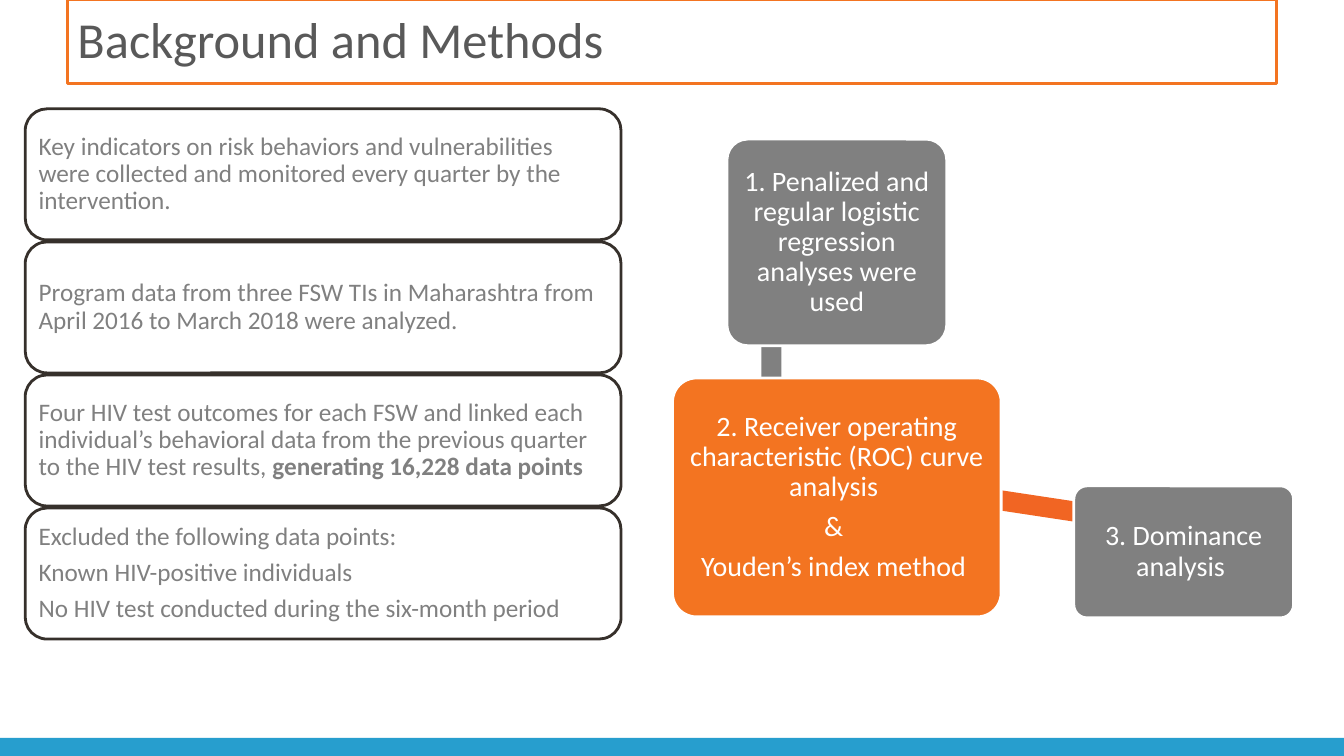
from dataclasses import dataclass

from pptx import Presentation
from pptx.dml.color import RGBColor
from pptx.enum.shapes import MSO_SHAPE
from pptx.enum.text import MSO_ANCHOR, PP_ALIGN
from pptx.util import Inches, Pt

RECT = MSO_SHAPE.RECTANGLE
ROUNDED = MSO_SHAPE.ROUNDED_RECTANGLE
MIDDLE = MSO_ANCHOR.MIDDLE
LEFT = PP_ALIGN.LEFT
CENTER = PP_ALIGN.CENTER


@dataclass(frozen=True)
class Theme:
    """Colours, font and type sizes of the slide."""
    font: str = "Calibri"
    white: str = "FFFFFF"
    gray: str = "808080"
    dark: str = "36302B"
    heading: str = "595959"
    orange: str = "F37421"
    link_orange: str = "F16523"
    blue: str = "279ECE"
    title_size: int = 36
    fact_size: int = 18
    step_size: int = 20


class SlideBuilder:
    """Draws styled elements on one slide."""

    def __init__(self, slide, theme):
        self.slide = slide
        self.theme = theme

    def block(self, kind, box, fill, line=None, rotation=0):
        """Add a filled shape with an optional outline."""
        shape = self.slide.shapes.add_shape(kind, *map(Inches, box))
        shape.shadow.inherit = False
        shape.rotation = rotation
        shape.fill.solid()
        shape.fill.fore_color.rgb = RGBColor.from_string(fill)
        if line:
            shape.line.color.rgb = RGBColor.from_string(line)
            shape.line.width = Pt(2)
        else:
            shape.line.fill.background()
        return shape

    def label(self, shape, paragraphs, size, color, align, inset):
        """Fill a shape with paragraphs, each a list of runs."""
        frame = shape.text_frame
        frame.word_wrap = True
        frame.vertical_anchor = MIDDLE
        frame.margin_left = frame.margin_right = Inches(inset)
        frame.margin_top = frame.margin_bottom = Inches(inset)
        for index, runs in enumerate(paragraphs):
            paragraph = frame.add_paragraph() if index else frame.paragraphs[0]
            paragraph.alignment = align
            paragraph.line_spacing = 0.9
            paragraph.space_after = Pt(round(0.35 * size, 1))
            for position, text in enumerate(runs):
                run = paragraph.add_run()
                run.text = text
                run.font.name = self.theme.font
                run.font.size = Pt(size)
                run.font.bold = position > 0
                run.font.color.rgb = RGBColor.from_string(color)

    def title(self, text):
        """Add the outlined title bar."""
        theme = self.theme
        bar = self.block(RECT, (0.67, 0, 11.99, 0.83), theme.white, theme.orange)
        self.label(bar, [[text]], theme.title_size, theme.heading, LEFT, 0.1)

    def fact(self, top, paragraphs):
        """Add one outlined background card."""
        theme = self.theme
        card = self.block(ROUNDED, (0.25, top, 5.91, 1.3), theme.white, theme.dark)
        self.label(card, paragraphs, theme.fact_size, theme.gray, LEFT, 0.07)

    def step(self, box, fill, paragraphs):
        """Add one method step."""
        theme = self.theme
        card = self.block(ROUNDED, box, fill, theme.white)
        card.adjustments[0] = 0.1
        self.label(card, paragraphs, theme.step_size, theme.white, CENTER, 0.08)


FACTS = [
    [["Key indicators on risk behaviors and vulnerabilities were collected "
      "and monitored every quarter by the intervention."]],
    [["Program data from three FSW TIs in Maharashtra from April 2016 to "
      "March 2018 were analyzed."]],
    [["Four HIV test outcomes for each FSW and linked each individual’s "
      "behavioral data from the previous quarter to the HIV test results, ",
      "generating 16,228 data points"]],
    [["Excluded the following data points:"],
     ["Known HIV-positive individuals"],
     ["No HIV test conducted during the six-month period"]],
]


def main():
    """Build and save the slide."""
    deck = Presentation()
    deck.slide_width, deck.slide_height = Inches(13.33), Inches(7.5)
    theme = Theme()
    builder = SlideBuilder(deck.slides.add_slide(deck.slide_layouts[6]), theme)

    builder.block(RECT, (0, 7.32, 13.4, 0.21), theme.blue)
    builder.title("Background and Methods")
    for index, paragraphs in enumerate(FACTS):
        builder.fact(1.08 + index * 1.32, paragraphs)

    builder.block(RECT, (6.39, 3.24, 2.52, 0.2), theme.gray, rotation=90)
    builder.step((7.21, 1.38, 2.18, 2.05), theme.gray, [
        ["1. Penalized and regular logistic regression analyses were used"]])
    builder.block(RECT, (7.63, 4.78, 3.47, 0.2), theme.link_orange, rotation=8.6)
    builder.step((6.67, 3.75, 3.26, 2.37), theme.orange, [
        ["2. Receiver operating characteristic (ROC) curve analysis "],
        ["& "],
        ["Youden’s index method "]])
    builder.step((10.65, 4.82, 2.18, 1.31), theme.gray, [
        ["3. Dominance analysis "]])

    deck.save("out.pptx")


if __name__ == "__main__":
    main()
